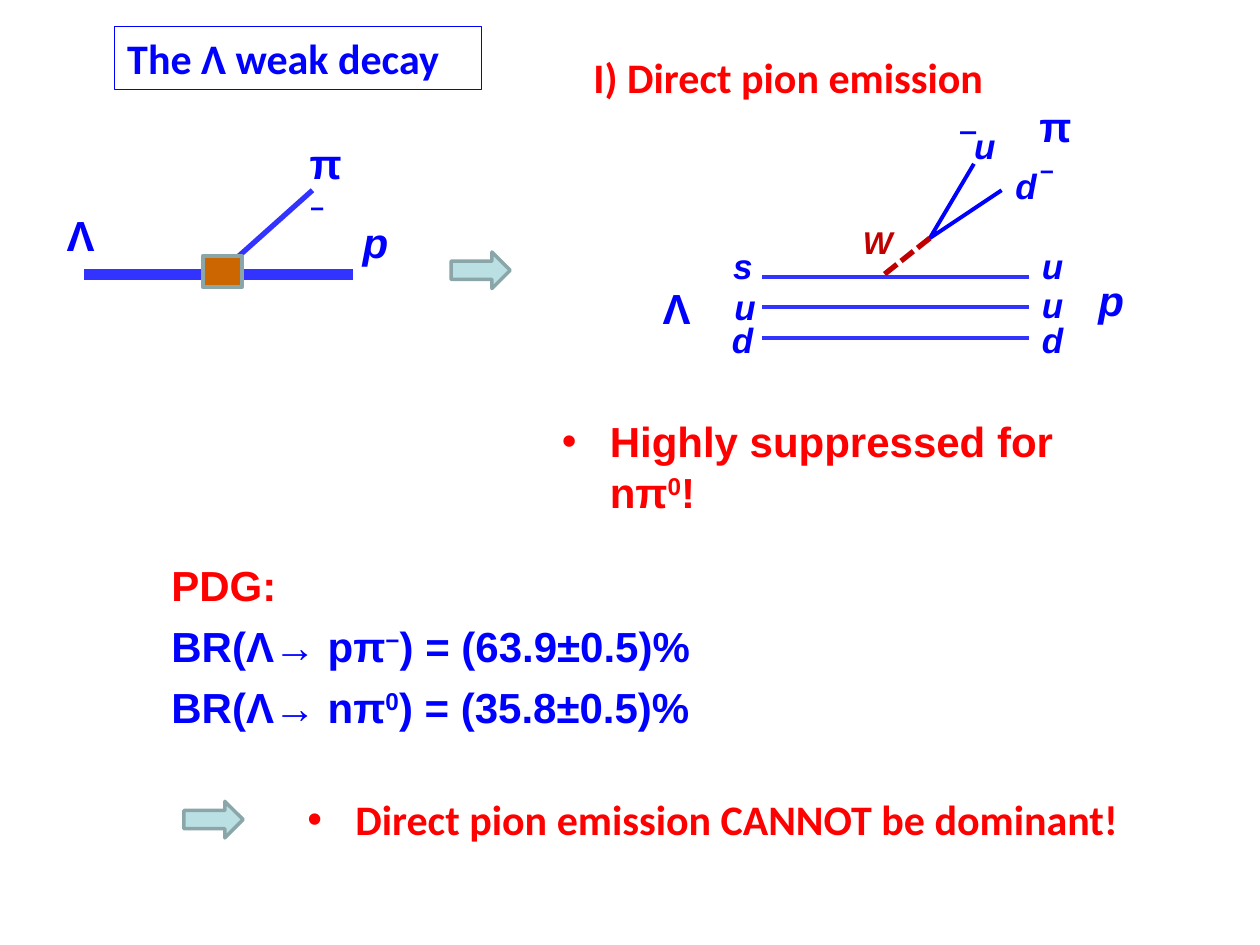
from dataclasses import dataclass

import lxml.etree
import pptx
import pptx.dml.color
import pptx.enum.dml
import pptx.enum.shapes
import pptx.enum.text
import pptx.oxml.ns
import pptx.util
from pptx.util import Inches


@dataclass(frozen=True)
class Theme:
    """Colours, fonts and type sizes of the slide."""
    blue: str = "0000FF"
    line_blue: str = "3333FF"
    red: str = "FF0000"
    boson: str = "C00000"
    vertex: str = "CC6600"
    arrow: str = "BBE0E3"
    edge: str = "8AA6A8"
    heading_font: str = "Calibri"
    body_font: str = "Arial"
    large: int = 24
    quark: int = 20
    small: int = 18


@dataclass(frozen=True)
class Box:
    """A region in inches."""
    left: float
    top: float
    width: float
    height: float

    def inner(self, x, y, width, height):
        """Return a box placed relative to this one."""
        return Box(self.left + x, self.top + y, width, height)

    def point(self, x, y):
        """Return a point relative to this box as slide lengths."""
        return Inches(self.left + x), Inches(self.top + y)

    def frame(self):
        """Return left, top, width and height as slide lengths."""
        return [Inches(v) for v in (self.left, self.top, self.width, self.height)]


THEME = Theme()
ROMAN, ITALIC, RAISED, RAISED_ITALIC = "roman", "italic", "raised", "raised italic"


def rgb(value):
    """Turn a hex string into a colour."""
    return pptx.dml.color.RGBColor.from_string(value)


def write(para, spans, color, size=THEME.large, font=THEME.body_font):
    """Fill a paragraph with (text, style) spans."""
    para.alignment = pptx.enum.text.PP_ALIGN.LEFT
    para.space_before = pptx.util.Pt(0)
    for text, style in spans:
        span = para.add_run()
        span.text = text
        span.font.name = font
        span.font.size = pptx.util.Pt(size)
        span.font.bold = True
        span.font.italic = "italic" in style
        span.font.color.rgb = rgb(color)
        if "raised" in style:
            span.font._element.set("baseline", "30000")


def prepare(frame):
    """Give a text frame wrapping, top anchoring and a fixed type size."""
    frame.word_wrap = True
    frame.auto_size = pptx.enum.text.MSO_AUTO_SIZE.NONE
    frame.vertical_anchor = pptx.enum.text.MSO_ANCHOR.TOP


def label(page, box, spans, color=THEME.blue, size=THEME.large):
    """Add a one-paragraph particle label."""
    frame = page.shapes.add_textbox(*box.frame()).text_frame
    prepare(frame)
    write(frame.paragraphs[0], spans, color, size)


def place(holder, box):
    """Move a placeholder into a box and return its text frame."""
    holder.left, holder.top, holder.width, holder.height = box.frame()
    prepare(holder.text_frame)
    return holder.text_frame


def line(page, start, end, color, width):
    """Add a straight line without a shadow."""
    connector = page.shapes.add_connector(
        pptx.enum.shapes.MSO_CONNECTOR.STRAIGHT, *start, *end)
    connector.line.color.rgb = rgb(color)
    connector.line.width = pptx.util.Pt(width)
    lxml.etree.SubElement(connector._element.spPr, pptx.oxml.ns.qn("a:effectLst"))
    return connector


def solid(page, kind, box, fill):
    """Add a filled preset shape with the grey-green edge."""
    shape = page.shapes.add_shape(kind, *box.frame())
    shape.shadow.inherit = False
    shape.fill.solid()
    shape.fill.fore_color.rgb = rgb(fill)
    shape.line.color.rgb = rgb(THEME.edge)
    shape.line.width = pptx.util.Pt(2)


def arrow(page, box):
    """Add a block arrow pointing right."""
    solid(page, pptx.enum.shapes.MSO_SHAPE.RIGHT_ARROW, box, THEME.arrow)


def title(page, box):
    """Place the framed slide title."""
    holder = page.shapes.title
    write(place(holder, box).paragraphs[0], [("The Λ weak decay", ROMAN)],
          THEME.blue, font=THEME.heading_font)
    holder.line.color.rgb = rgb(THEME.blue)
    holder.line.width = pptx.util.Pt(0.75)


def heading(holder, box):
    """Place the heading of the quark diagram."""
    write(place(holder, box).paragraphs[0], [("I) Direct pion emission", ROMAN)],
          THEME.red, font=THEME.heading_font)


def bullet(holder, box, spans, font):
    """Place a single red bullet."""
    para = place(holder, box).paragraphs[0]
    properties = para._p.get_or_add_pPr()
    properties.set("marL", str(Inches(0.38)))
    properties.set("indent", str(Inches(-0.38)))
    mark = lxml.etree.SubElement(properties, pptx.oxml.ns.qn("a:buChar"))
    mark.set("char", "•")
    write(para, spans, THEME.red, font=font)


def branching_ratios(holder, box):
    """Place the list of measured branching ratios."""
    frame = place(holder, box)
    write(frame.paragraphs[0], [("PDG:", ROMAN)], THEME.red)
    for nucleon, charge, value in (("p", "−", "63.9"), ("n", "0", "35.8")):
        para = frame.add_paragraph()
        write(para, [(f"BR(Λ→ {nucleon}π", ROMAN), (charge, RAISED),
                     (f") = ({value}±0.5)%", ROMAN)], THEME.blue)
        para.space_before = pptx.util.Pt(6)


def hadron_labels(page, box, places):
    """Label the Λ, p and π− at the given offsets."""
    names = ([("Λ", ROMAN)], [("p", ITALIC)], [("π", ROMAN), ("−", RAISED_ITALIC)])
    for spans, (x, y), width in zip(names, places, (0.59, 0.56, 0.51)):
        label(page, box.inner(x, y, width, 0.5), spans)


def hadron_diagram(page, box):
    """Draw the decay as a single vertex between hadrons."""
    line(page, box.point(0.24, 1.14), box.point(2.37, 1.14), THEME.line_blue, 6)
    line(page, box.point(1.3, 1.14), box.point(2.05, 0.47), THEME.line_blue, 3)
    solid(page, pptx.enum.shapes.MSO_SHAPE.RECTANGLE,
          box.inner(1.18, 0.99, 0.31, 0.25), THEME.vertex)
    hadron_labels(page, box, ((0, 0.57), (2.35, 0.63), (1.93, 0)))


def quark_diagram(page, box):
    """Draw the decay as quark lines with an emitted boson."""
    for row in range(3):
        y = 1.45 + 0.24 * row
        line(page, box.point(0.89, y), box.point(3.01, y), THEME.line_blue, 2.25)
    builder = page.shapes.build_freeform(*box.point(2.57, 0.55))
    builder.add_line_segments([box.point(2.22, 1.14), box.point(2.79, 0.76)], close=False)
    pair = builder.convert_to_shape()
    pair.shadow.inherit = False
    pair.fill.background()
    pair.line.color.rgb = rgb(THEME.blue)
    pair.line.width = pptx.util.Pt(2.25)
    boson = line(page, box.point(2.22, 1.14), box.point(1.83, 1.45), THEME.boson, 3)
    boson.line.dash_style = pptx.enum.dml.MSO_LINE.SQUARE_DOT
    quarks = (("s", 0.56, 1.14), ("u", 0.57, 1.47), ("d", 0.55, 1.73),
              ("u", 3.01, 1.14), ("u", 3.01, 1.45), ("d", 3.01, 1.73), ("d", 2.8, 0.51))
    for name, x, y in quarks:
        label(page, box.inner(x, y, 0.45, 0.44), [(name, ITALIC)], size=THEME.quark)
    label(page, box.inner(2.38, 0.19, 0.67, 0.44),
          [("‾", ROMAN), ("u", ITALIC)], size=THEME.quark)
    label(page, box.inner(1.59, 0.97, 0.51, 0.4), [("W", ITALIC)], THEME.boson, THEME.small)
    hadron_labels(page, box, ((0, 1.44), (3.46, 1.38), (2.99, 0)))


def main():
    """Build the slide and save the deck."""
    deck = pptx.Presentation()
    deck.slide_width, deck.slide_height = Inches(10), Inches(7.5)
    page = deck.slides.add_slide(deck.slide_layouts.get_by_name("Comparison"))
    holders = page.placeholders
    title(page, Box(0.91, 0.21, 2.91, 0.5))
    hadron_diagram(page, Box(0.43, 1.04, 2.91, 1.24))
    arrow(page, Box(3.58, 2, 0.47, 0.29))
    heading(holders[1], Box(4.61, 0.36, 3.4, 0.5))
    quark_diagram(page, Box(5.16, 0.75, 4.02, 2.17))
    bullet(holders[2], Box(4.36, 3.25, 4.85, 0.5),
           [("Highly suppressed for nπ", ROMAN), ("0", RAISED), ("!", ROMAN)],
           THEME.body_font)
    branching_ratios(holders[3], Box(1.26, 4.39, 4.39, 1.48))
    arrow(page, Box(1.46, 6.36, 0.47, 0.29))
    bullet(holders[4], Box(2.34, 6.25, 6.84, 0.5),
           [("Direct pion emission CANNOT be dominant!", ROMAN)], THEME.heading_font)
    deck.save("out.pptx")


if __name__ == "__main__":
    main()
